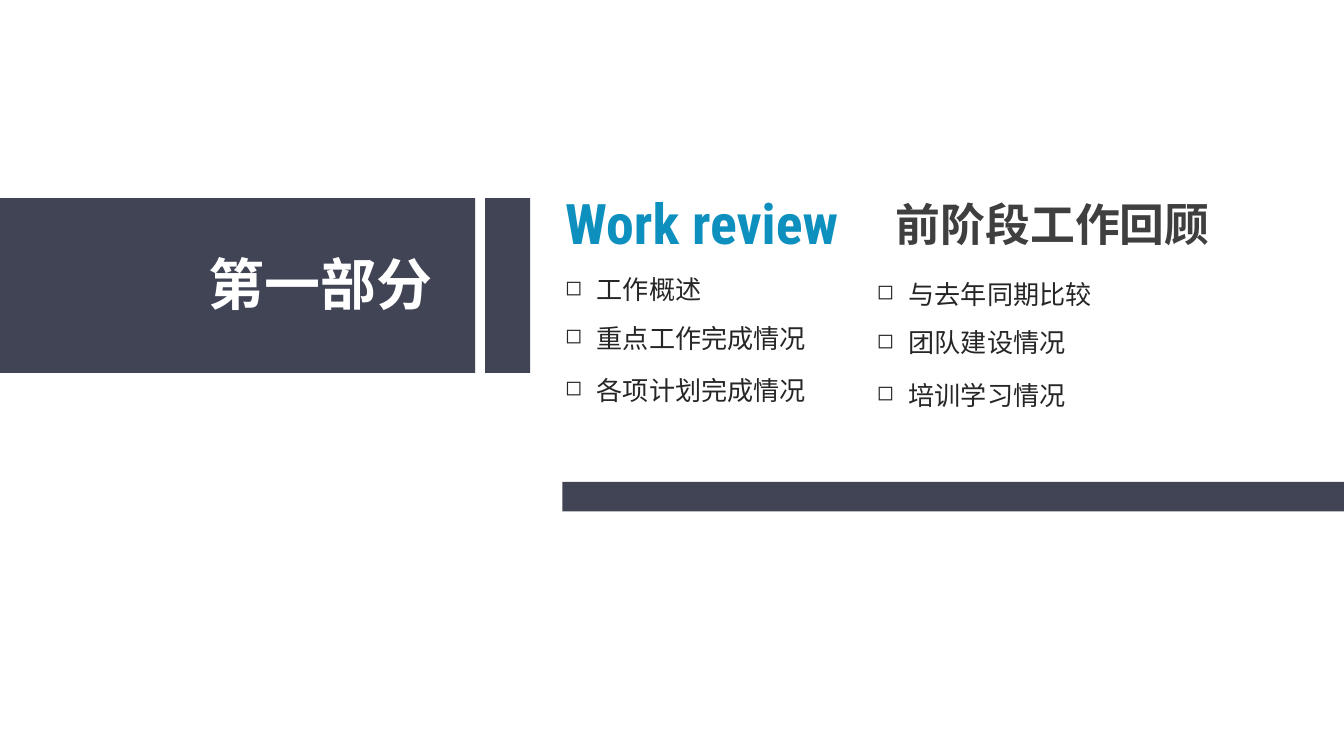
import dataclasses

import lxml.etree
import pptx
import pptx.dml.color
import pptx.enum.shapes
import pptx.enum.text
import pptx.oxml.ns
import pptx.shapes.shapetree
import pptx.util

PX = 4572
CJK = "Noto Sans CJK SC"
LATIN = "Roboto Condensed"
NAVY = "414455"
INDENT = 47


@dataclasses.dataclass(frozen=True)
class Bar:
    x: int
    y: int
    w: int
    h: int


@dataclasses.dataclass(frozen=True)
class Label:
    text: str
    x: int
    y: int
    w: int
    h: int
    size: int
    color: str
    font: str = CJK
    bold: bool = True
    bullet: str = ""


BARS = [Bar(0, 295, 707, 260), Bar(722, 295, 67, 260), Bar(837, 717, 1163, 44)]
PART = Label("第一部分", 296, 364, 368, 116, 30, "FFFFFF")
TITLES = [
    Label("Work review", 826, 272, 460, 116, 30, "0E90BE", LATIN),
    Label("前阶段工作回顾", 1318, 284, 502, 96, 24, "3F3F3F"),
]
COLUMNS = [
    (826, 399, ["工作概述", "重点工作完成情况", "各项计划完成情况"]),
    (1290, 406, ["与去年同期比较", "团队建设情况", "培训学习情况"]),
]
ROW_OFFSETS = [0, 72, 150]


def px(n: int) -> pptx.util.Emu:
    return pptx.util.Emu(n * PX)


def rgb(value: str) -> pptx.dml.color.RGBColor:
    return pptx.dml.color.RGBColor.from_string(value)


def set_attrs(obj: object, values: dict) -> None:
    for name, value in values.items():
        setattr(obj, name, value)


def draw_bar(shapes: pptx.shapes.shapetree.SlideShapes, bar: Bar) -> None:
    sp = shapes.add_shape(pptx.enum.shapes.MSO_SHAPE.RECTANGLE,
                          px(bar.x), px(bar.y), px(bar.w), px(bar.h))
    sp.shadow.inherit = False
    sp.fill.solid()
    sp.fill.fore_color.rgb = rgb(NAVY)
    sp.line.fill.background()


def draw_label(shapes: pptx.shapes.shapetree.SlideShapes, label: Label) -> None:
    qn = pptx.oxml.ns.qn
    sp = shapes.add_textbox(px(label.x), px(label.y), px(label.w), px(label.h))
    tf = sp.text_frame
    set_attrs(tf, {
        "margin_left": px(15), "margin_right": px(15),
        "margin_top": px(8), "margin_bottom": px(8),
        "word_wrap": False,
        "auto_size": pptx.enum.text.MSO_AUTO_SIZE.SHAPE_TO_FIT_TEXT,
    })
    p = tf.paragraphs[0]
    r = p.add_run()
    r.text = label.text
    set_attrs(r.font, {"name": label.font, "bold": label.bold,
                       "size": pptx.util.Pt(label.size)})
    r.font.color.rgb = rgb(label.color)
    lxml.etree.SubElement(r.font._element, qn("a:ea"), typeface=label.font)
    if label.bullet:
        pPr = p._p.get_or_add_pPr()
        pPr.set("marL", str(px(INDENT)))
        pPr.set("indent", str(-px(INDENT)))
        lxml.etree.SubElement(pPr, qn("a:buSzPct"), val="80000")
        lxml.etree.SubElement(pPr, qn("a:buChar"), char=label.bullet)


def main() -> None:
    prs = pptx.Presentation()
    set_attrs(prs, {"slide_width": px(2000), "slide_height": px(1125)})
    s = prs.slides.add_slide(prs.slide_layouts[6])
    for bar in BARS:
        draw_bar(s.shapes, bar)
    draw_label(s.shapes, PART)
    heading = s.shapes.add_group_shape()
    for title in TITLES:
        draw_label(heading.shapes, title)
    for x, top, topics in COLUMNS:
        for offset, topic in zip(ROW_OFFSETS, topics):
            width = round(78 + 39.2 * len(topic))
            draw_label(s.shapes, Label(topic, x, top + offset, width, 62, 14,
                                       "262626", bold=False, bullet="◻"))
    prs.save("out.pptx")


if __name__ == "__main__":
    main()
